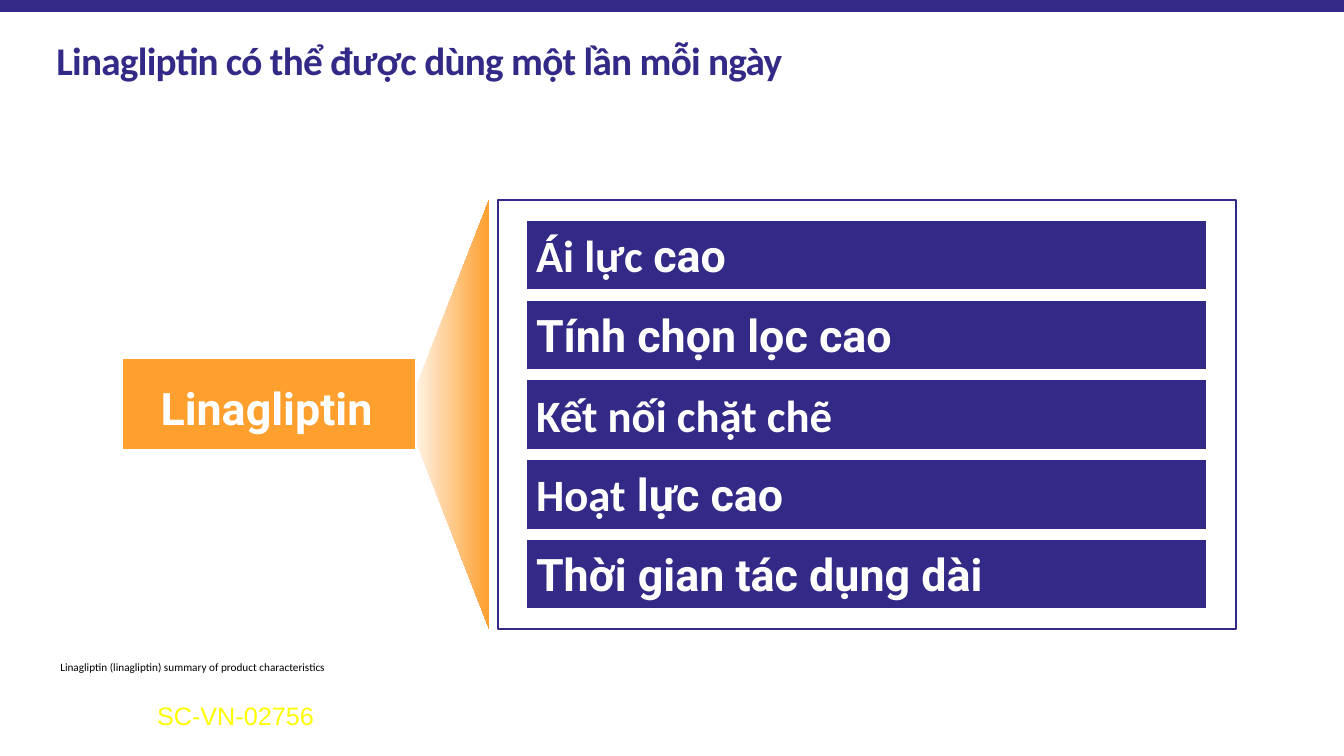
from pptx import Presentation
from pptx import util as u
from pptx.dml.color import RGBColor
from pptx.enum import shapes, text
from pptx.oxml.ns import qn

COLORS = {"navy": "322A86", "orange": "FE9F2E", "white": "FFFFFF",
          "black": "000000", "yellow": "FFFF00"}
REASONS = [
    [("Ái lực ", "Calibri"), ("cao", "Roboto")],
    [("Tính chọn lọc cao", "Roboto")],
    [("Kết nối chặt chẽ", "Calibri")],
    [("Hoạt", "Calibri"), (" lực cao", "Roboto")],
    [("Thời gian tác dụng dài", "Roboto")],
]


def color(name):
    return RGBColor.from_string(COLORS[name])


def place(shape, box):
    shape.left, shape.top, shape.width, shape.height = (u.Cm(n) for n in box)


def add_block(page, box, fill=None, line=None, kind=shapes.MSO_SHAPE.RECTANGLE):
    block = page.shapes.add_shape(kind, *(u.Cm(n) for n in box))
    block.shadow.inherit = False
    if fill:
        block.fill.solid()
        block.fill.fore_color.rgb = color(fill)
    else:
        block.fill.background()
    if line:
        block.line.color.rgb = color(line)
        block.line.width = u.Pt(1.5)
    else:
        block.line.fill.background()
    return block


def write(shape, spans, size, ink, bold=False, align=text.PP_ALIGN.LEFT,
          anchor=text.MSO_ANCHOR.MIDDLE, insets=(0, 0, 0, 0), leading=1.0,
          tracking=None):
    """Fill a shape with one paragraph of (words, font) spans; insets in cm."""
    frame = shape.text_frame
    frame.word_wrap = True
    frame.auto_size = text.MSO_AUTO_SIZE.NONE
    frame.vertical_anchor = anchor
    (frame.margin_left, frame.margin_top,
     frame.margin_right, frame.margin_bottom) = (u.Cm(n) for n in insets)
    para = frame.paragraphs[0]
    para.alignment = align
    para.line_spacing = leading
    para.space_before = u.Pt(0)
    for words, font in spans:
        span = para.add_run()
        span.text = words
        span.font.name = font
        span.font.size = u.Pt(size)
        span.font.bold = bold
        span.font.color.rgb = color(ink)
        if tracking:
            span.font._element.set("spc", str(int(tracking * 100)))
    return para


def header(page, box):
    left, top, width, height = box
    add_block(page, (left, top, width, 0.3), fill="navy")
    title = page.shapes.title
    place(title, (left + 1.42, top + 0.92, width - 2.93, height))
    write(title, [("Linagliptin có thể được dùng một lần mỗi ngày", "Calibri")],
          28, "navy", bold=True, tracking=-0.5)


def drug_label(page, box):
    label = add_block(page, box, fill="orange", line="white")
    write(label, [("Linagliptin", "Roboto")], 32, "white", bold=True,
          align=text.PP_ALIGN.CENTER, insets=(0, 0.18, 0.12, 0))


def fan(page, box):
    """Triangle opening to the right, fading in from its tip."""
    left, top, width, height = box
    unturned = (left + (width - height) / 2, top + (height - width) / 2, height, width)
    triangle = add_block(page, unturned, kind=shapes.MSO_SHAPE.ISOSCELES_TRIANGLE)
    triangle.rotation = 270
    triangle.fill.gradient()
    triangle.fill.gradient_angle = 270
    for stop, name in zip(triangle.fill.gradient_stops, ("white", "orange")):
        stop.color.rgb = color(name)


def reasons_panel(page, box):
    left, top, width, height = box
    add_block(page, box, line="navy")
    row_height, pitch = 1.78, 2.01
    for index, spans in enumerate(REASONS):
        row = add_block(page, (left + 0.71, top + 0.51 + index * pitch,
                               width - 1.44, row_height), fill="navy", line="white")
        write(row, spans, 32, "white", bold=True, leading=0.9,
              insets=(0.25, 0.25, 0.3, 0.1))


def footer(page, box):
    left, top, width, height = box
    note = page.placeholders[1]
    place(note, (left, top, width, 0.58))
    para = write(note, [("Linagliptin (linagliptin) summary of product characteristics",
                         "Calibri")], 8, "black",
                 anchor=text.MSO_ANCHOR.BOTTOM, insets=(1.52, 0, 0, 0))
    properties = para._p.get_or_add_pPr()
    properties.set("marL", "0")
    properties.set("indent", "0")
    properties.append(properties.makeelement(qn("a:buNone"), {}))

    code = page.shapes.add_textbox(*(u.Cm(n) for n in (left + 3.71, top + 1.12, 17.09, 1.02)))
    write(code, [("SC-VN-02756", "Arial")], 18, "yellow",
          anchor=text.MSO_ANCHOR.TOP, insets=(0.25, 0.13, 0.25, 0.13))


def main():
    deck = Presentation()
    deck.slide_width, deck.slide_height = u.Cm(33.87), u.Cm(19.05)
    page = deck.slides.add_slide(deck.slide_layouts[1])
    header(page, (0, 0, 33.87, 1.19))
    fan(page, (10.22, 5.03, 2.11, 10.82))
    reasons_panel(page, (12.55, 5.03, 18.59, 10.82))
    drug_label(page, (3.07, 9.02, 7.42, 2.31))
    footer(page, (0, 16.41, 32.36, 2.14))
    deck.save("out.pptx")


if __name__ == "__main__":
    main()
